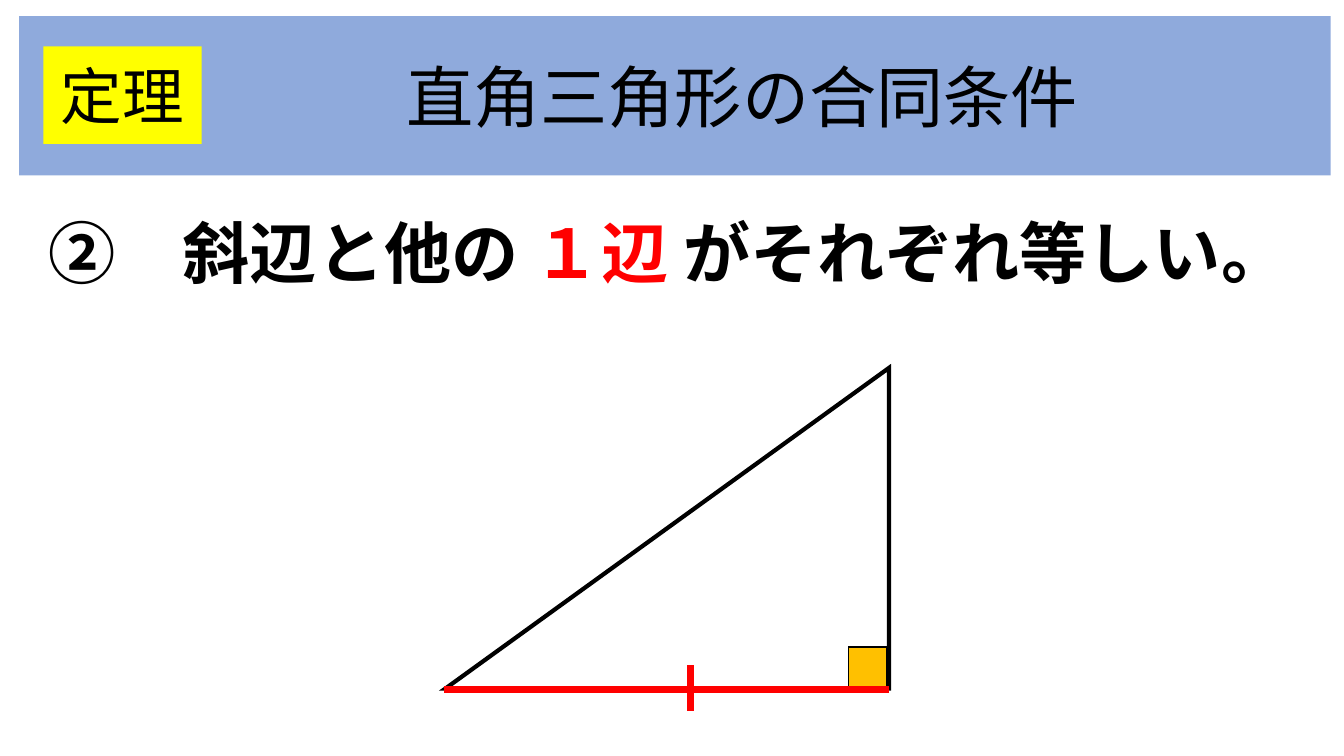
from pptx import Presentation
from pptx import util as u
from pptx.dml import color
from pptx.enum import shapes, text
from pptx.oxml import ns, xmlchemy

BLACK, RED = "000000", "FF0000"
BLUE, YELLOW, ORANGE = "8FAADC", "FFFF00", "FFC000"


def rgb(value):
    return color.RGBColor.from_string(value)


def assign(target, values):
    for name, value in values.items():
        setattr(target, name, value)


class Board:
    east_asian = "Noto Sans CJK JP"

    def __init__(self, page):
        self.page = page

    def outline(self, item, line_color, width):
        item.line.color.rgb = rgb(line_color)
        item.line.width = u.Pt(width)

    def shape(self, kind, frame, fill=None, line=None):
        item = self.page.shapes.add_shape(kind, *map(u.Pt, frame))
        item.shadow.inherit = False
        if fill:
            item.fill.solid()
            item.fill.fore_color.rgb = rgb(fill)
        else:
            item.fill.background()
        if line:
            self.outline(item, *line)
            miter = xmlchemy.OxmlElement("a:miter")
            miter.set("lim", "800000")
            item._element.spPr.find(ns.qn("a:ln")).append(miter)
        else:
            item.line.fill.background()
        return item

    def compose(self, item, spans, size, font, align, bold=False, indent=0):
        frame = item.text_frame
        assign(frame, {
            "word_wrap": True,
            "vertical_anchor": text.MSO_ANCHOR.MIDDLE,
            "margin_left": u.Pt(7.2 + indent),
        })
        para = frame.paragraphs[0]
        para.alignment = align
        for words, ink in spans:
            span = para.add_run()
            span.text = words
            assign(span.font, {"size": u.Pt(size), "name": font, "bold": bold})
            span.font.color.rgb = rgb(ink)
            face = xmlchemy.OxmlElement("a:ea")
            face.set("typeface", self.east_asian)
            span.font._element.find(ns.qn("a:latin")).addnext(face)

    def label(self, frame, fill, words, size, indent=0):
        item = self.shape(shapes.MSO_SHAPE.RECTANGLE, frame, fill)
        self.compose(item, [(words, BLACK)], size, "Cambria",
                     text.PP_ALIGN.CENTER, indent=indent)

    def statement(self, frame, spans, size):
        box = self.page.shapes.add_textbox(*map(u.Pt, frame))
        self.compose(box, spans, size, self.east_asian,
                     text.PP_ALIGN.LEFT, bold=True)

    def line(self, start, end, ink, width):
        item = self.page.shapes.add_connector(
            shapes.MSO_CONNECTOR.STRAIGHT, *map(u.Pt, (*start, *end)))
        self.outline(item, ink, width)
        item._element.spPr.append(xmlchemy.OxmlElement("a:effectLst"))


def main():
    deck = Presentation()
    assign(deck, {"slide_width": u.Pt(960), "slide_height": u.Pt(540)})
    board = Board(deck.slides.add_slide(deck.slide_layouts[6]))

    board.label((13.7, 11.5, 936.7, 113.8), BLUE,
                "直角三角形の合同条件", 48, indent=96)
    board.statement((27.4, 146.9, 897.1, 65.5), [
        ("②　斜辺と他の", BLACK),
        (" １辺 ", RED),
        ("がそれぞれ等しい。", BLACK),
    ], 48)
    board.label((31, 33.1, 113, 69.8), YELLOW, "定理", 44)

    board.shape(shapes.MSO_SHAPE.RECTANGLE, (606.2, 462.2, 27.4, 28.8),
                ORANGE, (BLACK, 1))
    triangle = board.shape(shapes.MSO_SHAPE.ISOSCELES_TRIANGLE,
                           (318.2, 262.8, 316.8, 229), line=(BLACK, 3))
    triangle.adjustments[0] = 1

    board.line((493.2, 475.2), (493.2, 507.6), RED, 4.5)
    board.line((316.8, 492.5), (635, 492.5), RED, 4.5)
    deck.save("out.pptx")


if __name__ == "__main__":
    main()
